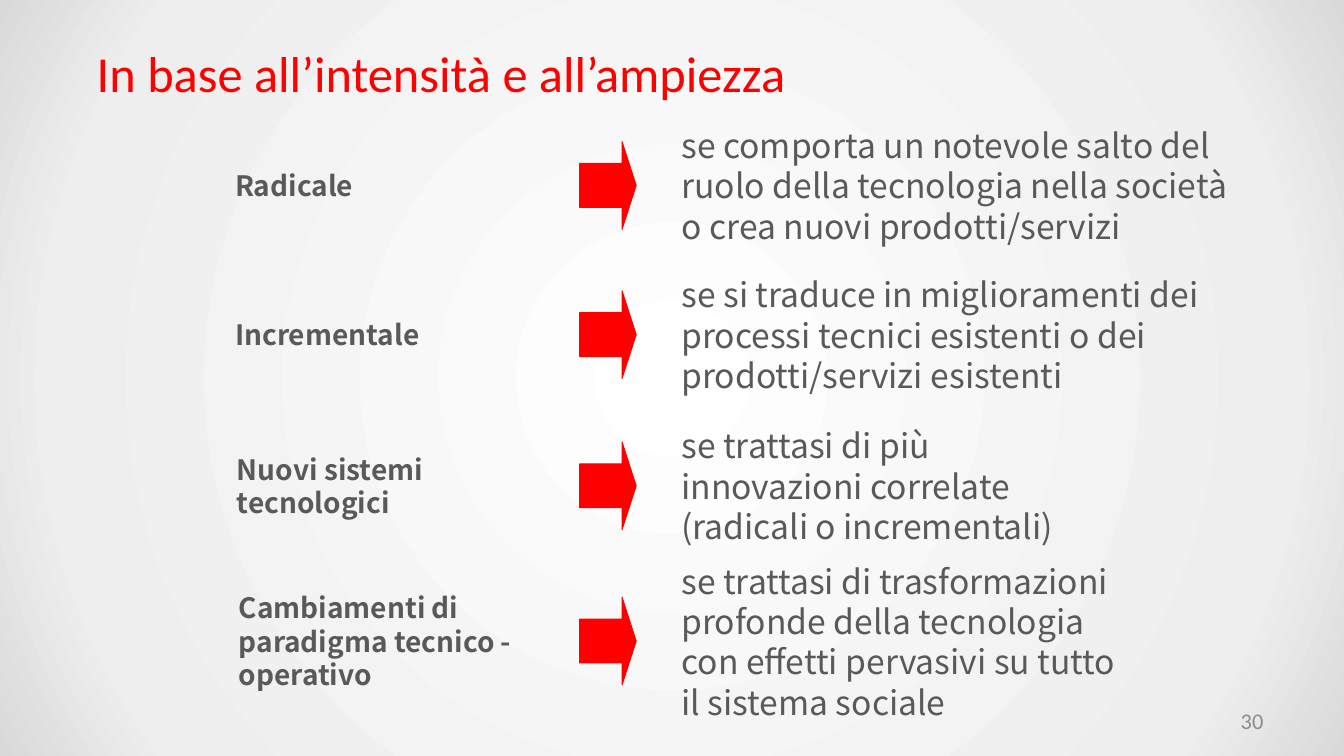
from lxml import etree
from pptx import Presentation
from pptx.dml.color import RGBColor
from pptx.enum.shapes import MSO_SHAPE
from pptx.enum.text import MSO_ANCHOR, MSO_AUTO_SIZE, PP_ALIGN
from pptx.util import Inches, Pt

ROUNDED = MSO_SHAPE.ROUNDED_RECTANGLE
ARROW = MSO_SHAPE.RIGHT_ARROW
MIDDLE = MSO_ANCHOR.MIDDLE
GROW = MSO_AUTO_SIZE.SHAPE_TO_FIT_TEXT
LEFT, RIGHT = PP_ALIGN.LEFT, PP_ALIGN.RIGHT
RED = RGBColor(0xFF, 0x00, 0x00)
DARK_GREY = RGBColor(0x59, 0x59, 0x59)
PALE_GREY = RGBColor(0x8C, 0x8C, 0x8C)

LABEL_FORMAT = {"name": "Noto Sans CJK KR", "size": Pt(20), "bold": True}
MEANING_FORMAT = {"name": "Noto Sans CJK KR", "size": Pt(24)}
TITLE_FORMAT = {"name": "Calibri", "size": Pt(36)}
NUMBER_FORMAT = {"name": "Calibri", "size": Pt(16)}
WIDE_MARGINS = {"margin_left": Inches(0.13), "margin_right": Inches(0.13),
                "margin_top": Inches(0.07), "margin_bottom": Inches(0.07)}

LABEL_LEFT, LABEL_WIDTH = 2.21, 3.49
ARROW_LEFT, ARROW_WIDTH, ARROW_HEIGHT = 5.75, 0.56, 0.87
MEANING_LEFT = 6.66

ROWS = [
    (1.84, "Radicale", 0.48, 5.83, 1.31,
     "se comporta un notevole salto del ruolo della tecnologia nella società "
     "o crea nuovi prodotti/servizi"),
    (3.32, "Incrementale", 0.48, 5.92, 1.31,
     "se si traduce in miglioramenti dei processi tecnici esistenti o dei "
     "prodotti/servizi esistenti"),
    (4.82, "Nuovi sistemi tecnologici", 0.86, 4.5, 1.31,
     "se trattasi di più innovazioni correlate (radicali o incrementali)"),
    (6.36, "Cambiamenti di paradigma tecnico - operativo", 1.23, 4.5, 1.72,
     "se trattasi di trasformazioni profonde della tecnologia con effetti "
     "pervasivi su tutto il sistema sociale"),
]

prs = Presentation()
prs.slide_width, prs.slide_height = Inches(13.33), Inches(7.5)
slide = prs.slides.add_slide(prs.slide_layouts[6])

backdrop = slide.background.fill
backdrop.gradient()
gradient = slide.background._cSld.bg.bgPr.find(
    "{http://schemas.openxmlformats.org/drawingml/2006/main}gradFill")
gradient.getparent().replace(gradient, etree.fromstring(
    '<a:gradFill xmlns:a="http://schemas.openxmlformats.org/drawingml/2006/main" '
    'rotWithShape="1"><a:gsLst>'
    '<a:gs pos="0"><a:srgbClr val="FFFFFF"/></a:gs>'
    '<a:gs pos="81000"><a:srgbClr val="EEEEEE"/></a:gs>'
    '<a:gs pos="100000"><a:srgbClr val="D9D9D9"/></a:gs></a:gsLst>'
    '<a:path path="circle"><a:fillToRect l="50000" t="50000" r="50000" b="50000"/>'
    '</a:path></a:gradFill>'))


def write(shape, words, font_format, color, align=LEFT, frame_format=None):
    frame = shape.text_frame
    frame.word_wrap = True
    frame.vertical_anchor = MIDDLE
    for key, value in (frame_format or {"auto_size": GROW}).items():
        setattr(frame, key, value)
    paragraph = frame.paragraphs[0]
    paragraph.alignment = align
    run = paragraph.add_run()
    run.text = words
    for key, value in font_format.items():
        setattr(run.font, key, value)
    run.font.color.rgb = color


def centred(left, middle, width, height):
    return [Inches(v) for v in (left, middle - height / 2, width, height)]


for middle, kind, kind_height, meaning_width, meaning_height, meaning in ROWS:
    label = slide.shapes.add_shape(
        ROUNDED, *centred(LABEL_LEFT, middle, LABEL_WIDTH, kind_height))
    label.shadow.inherit = False
    label.fill.background()
    label.line.fill.background()
    write(label, kind, LABEL_FORMAT, DARK_GREY)

    explanation = slide.shapes.add_textbox(
        *centred(MEANING_LEFT, middle, meaning_width, meaning_height))
    write(explanation, meaning, MEANING_FORMAT, DARK_GREY)

    arrow = slide.shapes.add_shape(
        ARROW, *centred(ARROW_LEFT, middle, ARROW_WIDTH, ARROW_HEIGHT))
    arrow.shadow.inherit = False
    arrow.adjustments[1] = 0.25
    arrow.fill.solid()
    arrow.fill.fore_color.rgb = RED
    arrow.line.color.rgb = RED
    arrow.line.width = Pt(0.75)

title = slide.shapes.add_textbox(*centred(0.83, 0.72, 12, 0.78))
write(title, "In base all’intensità e all’ampiezza", TITLE_FORMAT, RED,
      frame_format=WIDE_MARGINS)

page_number = slide.shapes.add_textbox(*centred(9.55, 7.15, 3.11, 0.4))
write(page_number, "30", NUMBER_FORMAT, PALE_GREY, RIGHT, WIDE_MARGINS)

prs.save("out.pptx")
